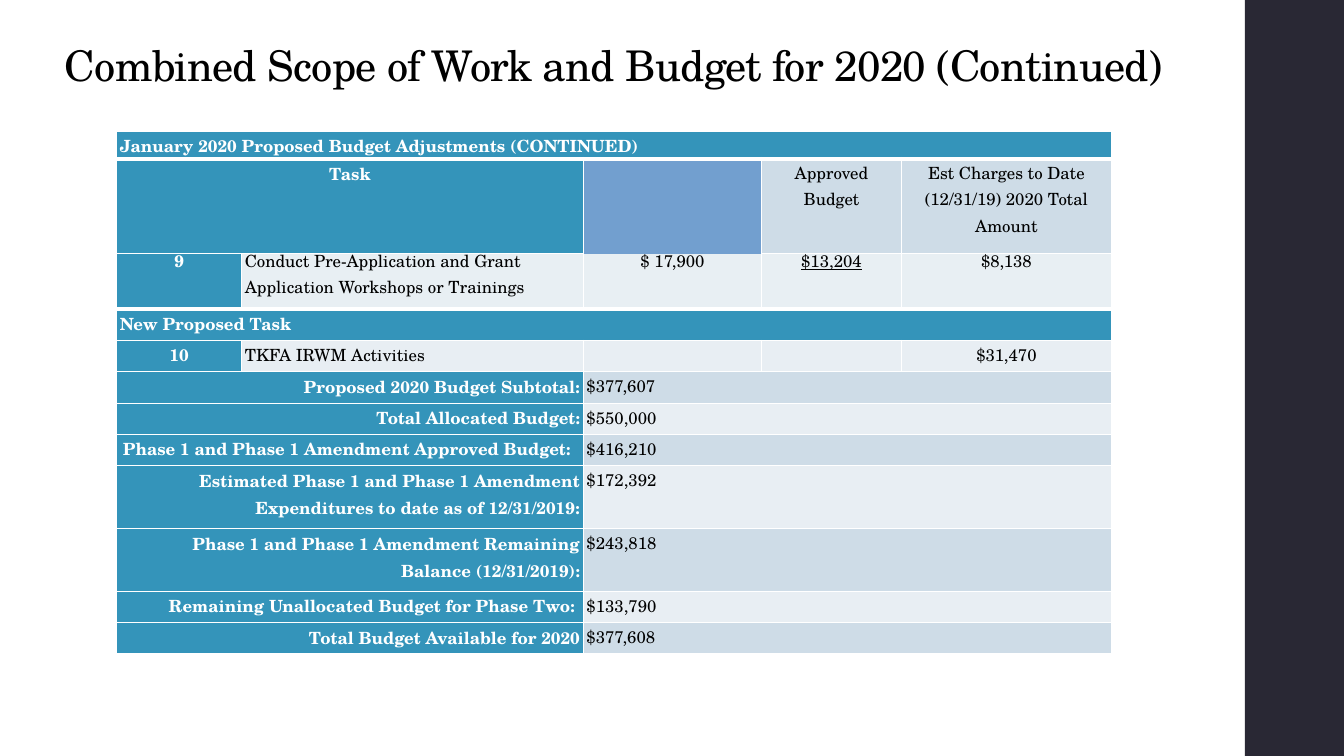
from dataclasses import dataclass

from lxml.etree import SubElement
from pptx import Presentation
from pptx.dml.color import RGBColor
from pptx.enum.shapes import MSO_SHAPE
from pptx.enum.text import MSO_ANCHOR, MSO_AUTO_SIZE, PP_ALIGN
from pptx.oxml.ns import qn
from pptx.util import Cm, Pt


@dataclass(frozen=True)
class Theme:
    """Hold the colours, font and type sizes of the slide."""
    font: str = "TeX Gyre Schola"
    title_size: float = 30.2
    table_size: float = 12
    white: str = "FFFFFF"
    black: str = "000000"
    bar: str = "292834"
    accent: str = "3494BA"
    dark_band: str = "CEDCE7"
    light_band: str = "E8EEF3"
    task_band: str = "E8EFF3"


@dataclass(frozen=True)
class Entry:
    """Describe one table cell and the columns it spans."""
    text: str
    fill: str
    align: PP_ALIGN = PP_ALIGN.CENTER
    span: int = 1
    underline: bool = False
    gap: float = 0


THEME = Theme()
COLUMNS = (3.15, 8.61, 4.5, 3.51, 5.31)
TABLE_LEFT = 2.94
INSET = 0.08
TOTALS = (
    ("Proposed 2020 Budget Subtotal:", "$377,607", 0),
    ("Total Allocated Budget:", "$550,000", 0),
    ("Phase 1 and Phase 1 Amendment Approved Budget:", "$416,210", 0.23),
    ("Estimated Phase 1 and Phase 1 Amendment Expenditures to date as of 12/31/2019:",
     "$172,392", 0),
    ("Phase 1 and Phase 1 Amendment Remaining Balance (12/31/2019):", "$243,818", 0),
    ("Remaining Unallocated Budget for Phase Two:", "$133,790", 0.12),
    ("Total Budget Available for 2020", "$377,608", 0),
)


def write(tf, text, size=THEME.table_size, color=THEME.black, bold=False,
          underline=False, align=PP_ALIGN.LEFT, spacing=1.07, tracking=None):
    """Write one formatted paragraph into a text frame."""
    tf.word_wrap = True
    p = tf.paragraphs[0]
    p.alignment = align
    p.line_spacing = spacing
    r = p.add_run()
    r.text = text
    r.font.name = THEME.font
    r.font.size = Pt(size)
    r.font.bold = bold
    r.font.underline = underline
    r.font.color.rgb = RGBColor.from_string(color)
    if tracking is not None:
        r._r.get_or_add_rPr().set("spc", str(round(tracking * 100)))


def set_borders(cell, bottom):
    """Draw white borders around a cell."""
    tcPr = cell._tc.get_or_add_tcPr()
    for i, (side, width) in enumerate((("lnL", 1), ("lnR", 1), ("lnT", 1), ("lnB", bottom))):
        ln = SubElement(tcPr, qn(f"a:{side}"), w=str(Pt(width)))
        fill = SubElement(ln, qn("a:solidFill"))
        SubElement(fill, qn("a:srgbClr"), val=THEME.white)
        tcPr.insert(i, ln)


def fill_cell(cell, entry, bottom):
    """Format a cell and write its entry."""
    cell.margin_left = Cm(INSET)
    cell.margin_right = Cm(INSET + entry.gap)
    cell.margin_top = cell.margin_bottom = 0
    cell.fill.solid()
    cell.fill.fore_color.rgb = RGBColor.from_string(entry.fill)
    set_borders(cell, bottom)
    heading = entry.fill == THEME.accent
    write(cell.text_frame, entry.text, bold=heading, align=entry.align,
          color=THEME.white if heading else THEME.black, underline=entry.underline)


def add_table(s, top, heights, rows):
    """Add a table whose first row has a thick lower border."""
    tbl = s.shapes.add_table(len(rows), len(COLUMNS), Cm(TABLE_LEFT), Cm(top),
                             Cm(sum(COLUMNS)), Cm(sum(heights))).table
    tbl.first_row = tbl.horz_banding = False
    for column, width in zip(tbl.columns, COLUMNS):
        column.width = Cm(width)
    for i, (height, entries) in enumerate(zip(heights, rows)):
        tbl.rows[i].height = Cm(height)
        col = 0
        for entry in entries:
            cell = tbl.cell(i, col)
            if entry.span > 1:
                cell.merge(tbl.cell(i, col + entry.span - 1))
            fill_cell(cell, entry, bottom=3 if i == 0 else 1)
            col += entry.span


def banner(text):
    """Return a row holding one full-width heading."""
    return [Entry(text, THEME.accent, PP_ALIGN.JUSTIFY, span=len(COLUMNS))]


def task_row(number, name, amounts, fill, underlined=None):
    """Return a row with a task and its three amounts."""
    return [Entry(number, THEME.accent), Entry(name, fill, PP_ALIGN.LEFT),
            *(Entry(a, fill, underline=a == underlined) for a in amounts)]


def total_rows():
    """Return the budget totals on alternating bands."""
    bands = (THEME.dark_band, THEME.light_band)
    return [[Entry(label, THEME.accent, PP_ALIGN.RIGHT, span=2, gap=gap),
             Entry(amount, bands[i % 2], PP_ALIGN.JUSTIFY, span=3)]
            for i, (label, amount, gap) in enumerate(TOTALS)]


def add_side_bar(s):
    """Add the dark bar at the right edge."""
    sp = s.shapes.add_shape(MSO_SHAPE.RECTANGLE, Cm(31.37), 0, Cm(2.5), Cm(19.05))
    sp.shadow.inherit = False
    sp.fill.solid()
    sp.fill.fore_color.rgb = RGBColor.from_string(THEME.bar)
    sp.line.fill.background()


def add_title(s, text):
    """Place and format the title placeholder."""
    sp = s.shapes.title
    sp.left, sp.top, sp.width, sp.height = Cm(1.38), Cm(1.21), Cm(29.54), Cm(2.16)
    tf = sp.text_frame
    tf.auto_size = MSO_AUTO_SIZE.NONE
    tf.vertical_anchor = MSO_ANCHOR.TOP
    write(tf, text, size=THEME.title_size, spacing=0.7, tracking=-0.5)


def main():
    """Build and save the budget slide."""
    prs = Presentation()
    prs.slide_width, prs.slide_height = Cm(33.87), Cm(19.05)
    s = prs.slides.add_slide(prs.slide_layouts[5])
    add_side_bar(s)
    single, double = 0.79, 1.58
    add_table(s, 6.21, [double, *[single] * 5, double, double, single, single], [
        task_row("9", "Conduct Pre-Application and Grant Application Workshops or Trainings",
                 ("$ 17,900", "$13,204", "$8,138"), THEME.task_band, underlined="$13,204"),
        banner("New Proposed Task"),
        task_row("10", "TKFA IRWM Activities", ("", "", "$31,470"), THEME.light_band),
        *total_rows(),
    ])
    headings = ("Approved Budget", "Est Charges to Date (12/31/19) ", "2020 Total Amount")
    add_table(s, 3.3, [0.46, 2.39], [
        banner("January 2020 Proposed Budget Adjustments (CONTINUED)"),
        [Entry("Task", THEME.accent, span=2),
         *(Entry(heading, THEME.dark_band) for heading in headings)],
    ])
    add_title(s, "Combined Scope of Work and Budget for 2020 (Continued)")
    prs.save("out.pptx")


if __name__ == "__main__":
    main()
